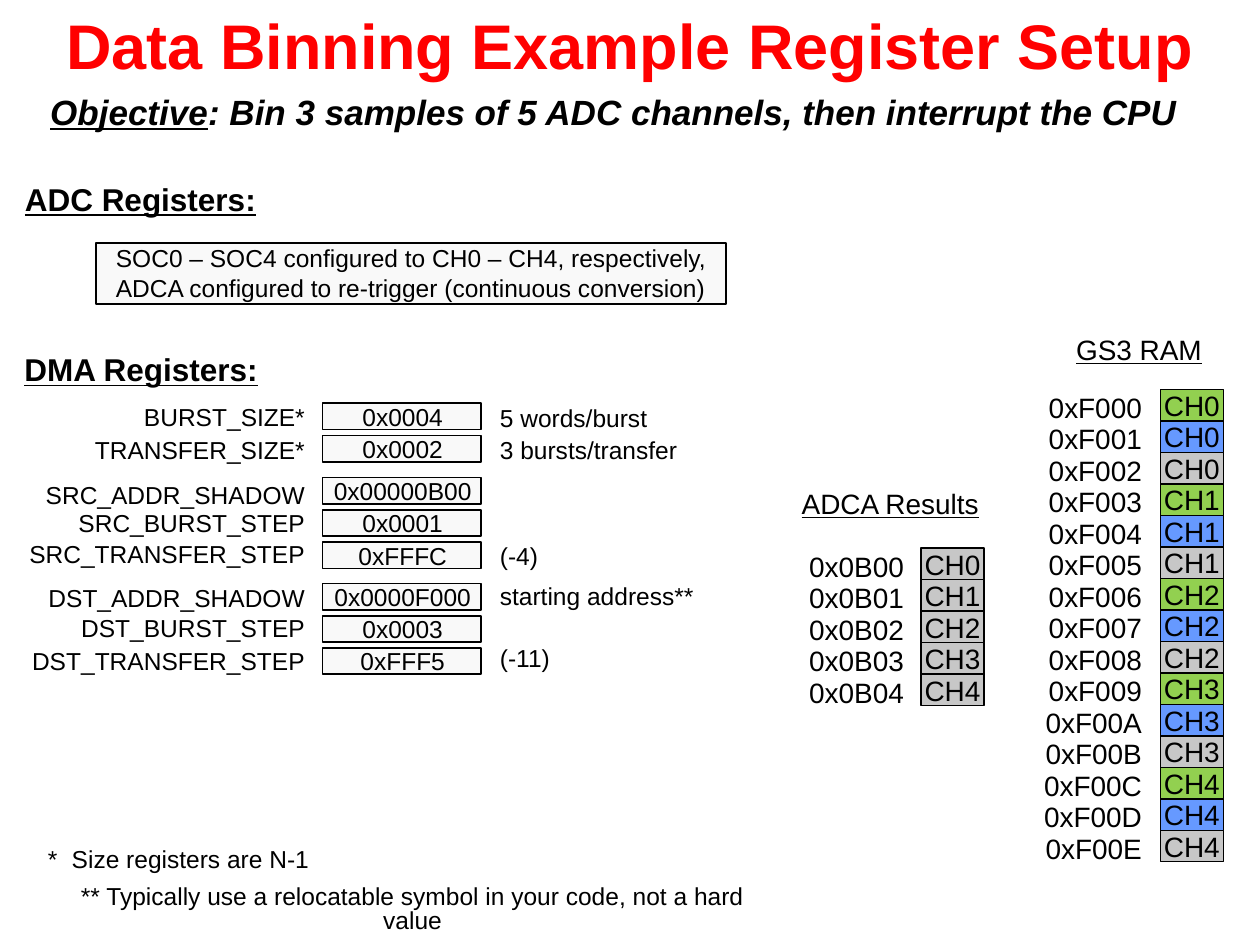
from pptx import Presentation
from pptx import util as u
from pptx.dml.color import RGBColor
from pptx.enum import shapes, text

BLACK = RGBColor(0x00, 0x00, 0x00)
RED = RGBColor(0xFF, 0x00, 0x00)
PALE = RGBColor(0xF9, 0xF9, 0xF9)
GRAY = RGBColor(0xC7, 0xC7, 0xC7)
GREEN = RGBColor(0x92, 0xD0, 0x50)
BLUE = RGBColor(0x66, 0x99, 0xFF)

LEFT, CENTER, RIGHT = text.PP_ALIGN.LEFT, text.PP_ALIGN.CENTER, text.PP_ALIGN.RIGHT
TOP, MIDDLE = text.MSO_ANCHOR.TOP, text.MSO_ANCHOR.MIDDLE

REGISTER_GROUPS = [
    (0, [("BURST_SIZE*", -4.3, "0x0004", "5 words/burst", -3.6),
         ("TRANSFER_SIZE*", -3.6, "0x0002", "3 bursts/transfer", -3.6)]),
    (42.5, [("SRC_ADDR_SHADOW", -2.2, "0x00000B00", "", 0),
            ("SRC_BURST_STEP", -4.3, "0x0001", "", 0),
            ("SRC_TRANSFER_STEP", -5, "0xFFFC", "(-4)", -4.3)]),
    (103, [("DST_ADDR_SHADOW", -3.6, "0x0000F000", "starting address**", -5),
           ("DST_BURST_STEP", -5, "0x0003", "", 0),
           ("DST_TRANSFER_STEP", -4.3, "0xFFF5", "(-11)", -6.5)]),
]


def write(shape, content, size=14, color=BLACK, bold=False, italic=False, underline=False,
          align=LEFT, anchor=TOP, wrap=True, spacing=None, margins=(7.2, 3.6, 7.2, 3.6), hang=0):
    frame = shape.text_frame
    frame.word_wrap = wrap
    frame.vertical_anchor = anchor
    frame.margin_left, frame.margin_top, frame.margin_right, frame.margin_bottom = map(u.Pt, margins)
    para = frame.paragraphs[0]
    para.alignment = align
    if spacing:
        para.line_spacing = spacing
    if hang:
        properties = para._p.get_or_add_pPr()
        properties.set("marL", str(u.Pt(hang)))
        properties.set("indent", str(-u.Pt(hang)))
    spans = [(content, underline)] if isinstance(content, str) else content
    for words, underlined in spans:
        span = para.add_run()
        span.text = words
        font = span.font
        font.name, font.size, font.color.rgb = "Arial", u.Pt(size), color
        font.bold, font.italic, font.underline = bold, italic, underlined


def add_text(page, box, content, **style):
    shape = page.shapes.add_textbox(*map(u.Pt, box))
    write(shape, content, **style)


def add_cell(page, box, content, fill, line_width, **style):
    shape = page.shapes.add_shape(shapes.MSO_SHAPE.RECTANGLE, *map(u.Pt, box))
    shape.shadow.inherit = False
    shape.fill.solid()
    shape.fill.fore_color.rgb = fill
    shape.line.color.rgb = BLACK
    shape.line.width = u.Pt(line_width)
    write(shape, content, anchor=MIDDLE, **style)


def add_header(page, box):
    left, top, width, height = box
    add_text(page, (left, top, width, 50.3), "Data Binning Example Register Setup",
             size=36, color=RED, bold=True, align=CENTER, anchor=MIDDLE)
    add_text(page, (left + 21.6, top + 51.8, width - 49, height - 51.8),
             [("Objective", True), (": Bin 3 samples of 5 ADC channels, then interrupt the CPU", False)],
             size=20, bold=True, italic=True, spacing=0.85)


def add_section_title(page, box, content):
    add_text(page, box, content, size=18, bold=True, underline=True,
             align=CENTER, spacing=0.8, margins=(0, 3.6, 0, 3.6))


def add_adc_registers(page, box):
    left, top, width, height = box
    add_section_title(page, (left, top, 146, 24.5), "ADC Registers:")
    add_cell(page, (left + 47.5, top + 35.3, width - 47.5, height - 35.3),
             "SOC0 – SOC4 configured to CH0 – CH4, respectively, "
             "ADCA configured to re-trigger (continuous conversion)",
             PALE, 1, margins=(11.5, 2.6, 4, 3.6))


def add_dma_registers(page, box):
    left, top, width, height = box
    add_section_title(page, (left + 6.5, top, 148.3, 24.5), "DMA Registers:")
    value_left, note_left, pitch = left + 184.3, left + 278.6, 18.4
    for offset, registers in REGISTER_GROUPS:
        for row, (name, name_shift, value, note, note_shift) in enumerate(registers):
            row_top = top + 29.5 + offset + row * pitch
            add_text(page, (left, row_top + name_shift, 181.4, 23.8), name, align=RIGHT)
            add_cell(page, (value_left, row_top, 90.7, 15.1), value, PALE, 1,
                     align=CENTER, wrap=False, margins=(1, 0, 0, 0))
            if note:
                add_text(page, (note_left, row_top + note_shift, left + width - note_left, 23.8), note)


def add_memory(page, box, heading, heading_box, start, channels):
    left, top, width, height = box
    shift, rise, heading_width = heading_box
    add_text(page, (left + shift, top - rise, heading_width, 26.6), heading,
             size=16, underline=True, align=CENTER)
    pitch = height / len(channels)
    for row, (channel, fill) in enumerate(channels):
        row_top = top + row * pitch
        add_text(page, (left, row_top - 2.9, 75, 26.6), f"0x{start + row:04X}", size=16, align=RIGHT)
        add_cell(page, (left + width - 36, row_top, 36, pitch), f"CH{channel}", fill, 0.75,
                 size=16, align=CENTER, wrap=False, margins=(0, 0, 0, 0))


def add_footnotes(page, box):
    left, top, width, height = box
    add_text(page, (left, top, 193.7, 23.8), "*\tSize registers are N-1", hang=13.7)
    add_text(page, (left + 0.7, top + 24.5, width, height - 24.5),
             "** Typically use a relocatable symbol in your code, not a hard value",
             align=CENTER, spacing=0.8, margins=(18, 3.6, 18, 3.6))


def main():
    deck = Presentation()
    deck.slide_width, deck.slide_height = u.Pt(720), u.Pt(540)
    page = deck.slides.add_slide(deck.slide_layouts[6])
    add_header(page, (0, 0, 720, 79.2))
    add_adc_registers(page, (7.2, 103.7, 407.5, 69.9))
    add_dma_registers(page, (0, 200.9, 445, 184.3))
    add_memory(page, (448.6, 313.2, 113.7, 90), "ADCA Results", (-28.1, 38.9, 176.4),
               0x0B00, [(channel, GRAY) for channel in range(5)])
    add_memory(page, (584.6, 222.5, 114.5, 270), "GS3 RAM", (12.3, 36, 108),
               0xF000, [(channel, fill) for channel in range(5) for fill in (GREEN, BLUE, GRAY)])
    add_footnotes(page, (20.2, 478.8, 429.8, 45.4))
    deck.save("out.pptx")


if __name__ == "__main__":
    main()
